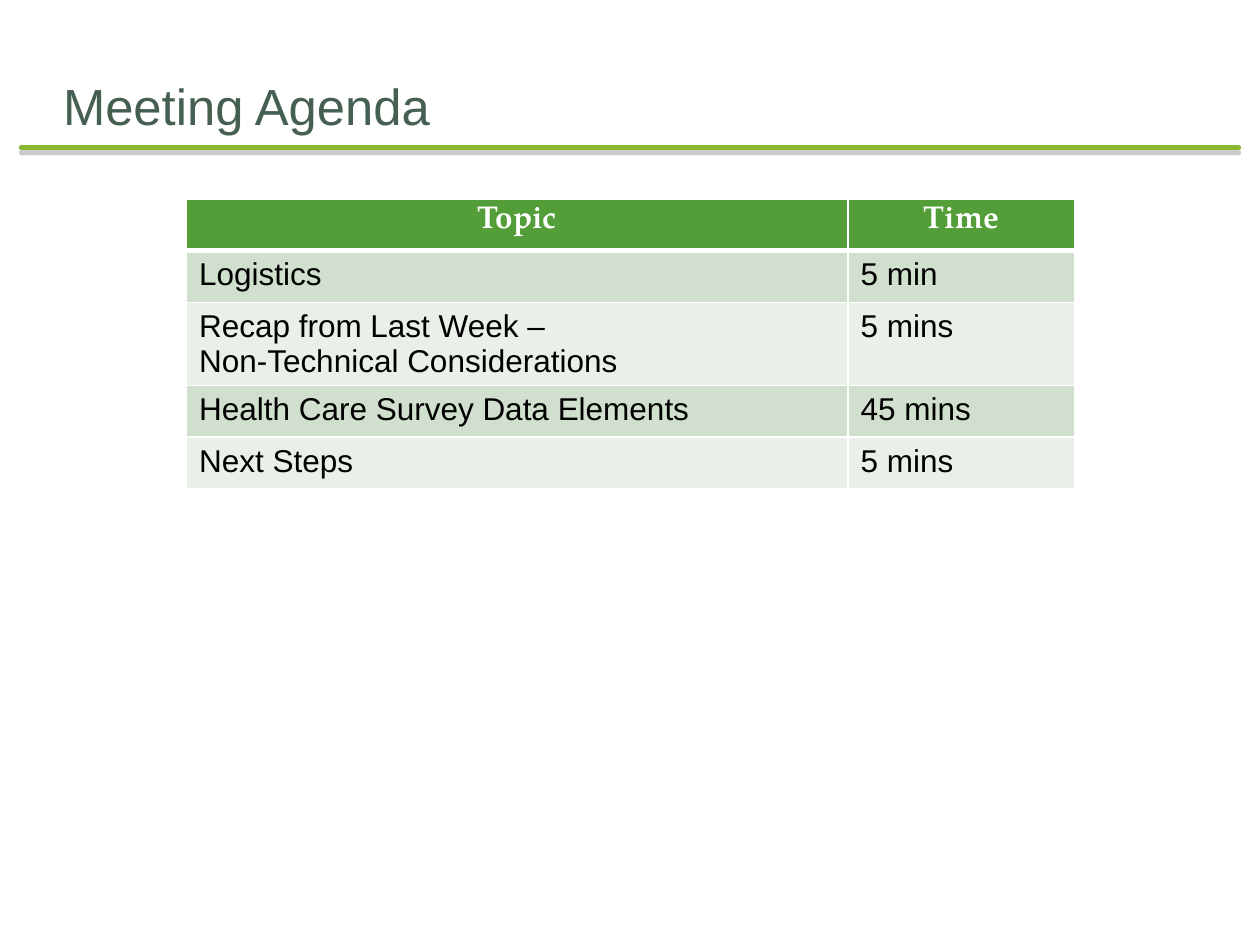
from lxml import etree
from pptx import Presentation
from pptx.dml.color import RGBColor
from pptx.enum import shapes, text
from pptx.oxml import ns
from pptx.util import Inches, Pt

COLORS = {
    "title": "455F51",
    "rule": "8AB833",
    "shadow": "808080",
    "header": "549E39",
    "odd": "D1DFCE",
    "even": "E9F0E8",
    "white": "FFFFFF",
    "black": "000000",
}
BODY_FONT = "Arial"
HEADER_FONT = "TeX Gyre Pagella"
AGENDA = [
    ("Topic", "Time"),
    ("Logistics", "5 min"),
    ("Recap from Last Week –\nNon-Technical Considerations", "5 mins"),
    ("Health Care Survey Data Elements", "45 mins"),
    ("Next Steps", "5 mins"),
]
COLUMN_WIDTHS = (5.25, 1.8)
ROW_HEIGHT = 0.41


def rgb(name):
    return RGBColor.from_string(COLORS[name])


def sub(parent, tag, **attributes):
    return etree.SubElement(parent, ns.qn(tag), attributes)


def style_font(font, name, size, color, bold=False):
    font.name, font.size, font.bold = name, Pt(size), bold
    font.color.rgb = rgb(color)


def add_title(slide, wording):
    title = slide.shapes.title
    title.left, title.top = Inches(0.5), Inches(0.5)
    title.width, title.height = Inches(9), Inches(0.58)
    frame = title.text_frame
    frame.text = wording
    frame.word_wrap = True
    frame.auto_size = text.MSO_AUTO_SIZE.NONE
    frame.vertical_anchor = text.MSO_ANCHOR.BOTTOM
    frame.margin_left = frame.margin_right = frame.margin_bottom = 0
    frame.margin_top = Inches(0.05)
    para = frame.paragraphs[0]
    para.alignment = text.PP_ALIGN.LEFT
    style_font(para.font, BODY_FONT, 29, "title")


def add_title_rule(slide):
    """Draw the round-ended line under the title, with a hard shadow below it."""
    rule = slide.shapes.add_connector(
        shapes.MSO_CONNECTOR.STRAIGHT,
        Inches(0.17), Inches(1.17), Inches(9.83), Inches(1.17))
    rule.line.color.rgb = rgb("rule")
    rule.line.width = Pt(3)
    rule.line._get_or_add_ln().set("cap", "rnd")
    effects = sub(rule._element.spPr, "a:effectLst")
    shadow = sub(effects, "a:outerShdw", blurRad="0", dist=str(Pt(3)),
                 dir="5400000", algn="ctr", rotWithShape="0")
    color = sub(shadow, "a:srgbClr", val=COLORS["shadow"])
    sub(color, "a:alpha", val="40000")


def set_borders(cell, bottom=1, top=1):
    properties = cell._tc.get_or_add_tcPr()
    widths = {"a:lnL": 1, "a:lnR": 1, "a:lnT": top, "a:lnB": bottom}
    for tag, width in widths.items():
        line = sub(properties, tag, w=str(Pt(width)))
        sub(sub(line, "a:solidFill"), "a:srgbClr", val=COLORS["white"])


def fill_cell(cell, wording, row):
    is_header = row == 0
    set_borders(cell, bottom=3 if is_header else 1, top=3 if row == 1 else 1)
    cell.fill.solid()
    cell.fill.fore_color.rgb = rgb(
        "header" if is_header else "odd" if row % 2 else "even")
    cell.text = wording
    for para in cell.text_frame.paragraphs:
        if is_header:
            para.alignment = text.PP_ALIGN.CENTER
            style_font(para.font, HEADER_FONT, 18, "white", bold=True)
        else:
            style_font(para.font, BODY_FONT, 18, "black")


def add_agenda_table(slide):
    table = slide.shapes.add_table(
        len(AGENDA), len(COLUMN_WIDTHS), Inches(1.48), Inches(1.58),
        Inches(sum(COLUMN_WIDTHS)), Inches(ROW_HEIGHT * len(AGENDA))).table
    for column, width in zip(table.columns, COLUMN_WIDTHS):
        column.width = Inches(width)
    for row, entries in enumerate(AGENDA):
        table.rows[row].height = Inches(ROW_HEIGHT)
        for column, wording in enumerate(entries):
            fill_cell(table.cell(row, column), wording, row)


def main():
    deck = Presentation()
    deck.slide_width, deck.slide_height = Inches(10), Inches(7.5)
    slide = deck.slides.add_slide(deck.slide_layouts.get_by_name("Title Only"))
    add_title_rule(slide)
    add_title(slide, "Meeting Agenda")
    add_agenda_table(slide)
    deck.save("out.pptx")


if __name__ == "__main__":
    main()
